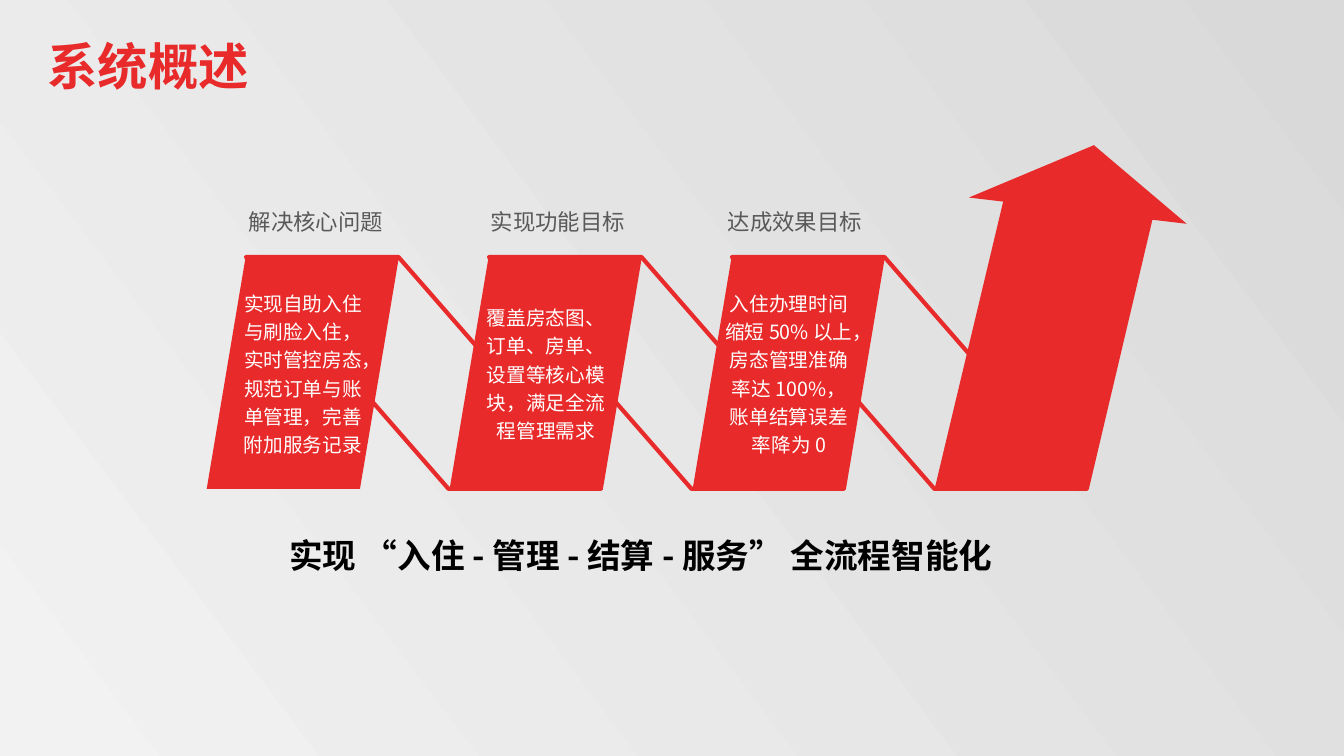
from pptx import Presentation
from pptx import util as u
from pptx.dml.color import RGBColor
from pptx.enum import shapes, text
from pptx.oxml.ns import qn
from lxml import etree

HUES = {"red": "E82A2A", "gray": "595959", "white": "FFFFFF", "black": "000000",
        "dark": "D9D9D9", "light": "F2F2F2"}
FONT = "Noto Sans CJK JP"


def write(frame, words, size, hue, align=None, bold=False):
    para = frame.paragraphs[0]
    para.alignment = align
    run = para.add_run()
    run.text = words
    font = run.font
    font.name, font.size, font.bold = FONT, u.Pt(size), bold
    font.color.rgb = RGBColor.from_string(HUES[hue])
    etree.SubElement(font._element, qn("a:ea"), typeface=FONT)
    return para


def label(box, words, size, hue, align=None, bold=False, wrap=True):
    frame = slide.shapes.add_textbox(*map(u.Inches, box)).text_frame
    frame.word_wrap = wrap
    frame.auto_size = text.MSO_AUTO_SIZE.SHAPE_TO_FIT_TEXT
    write(frame, words, size, hue, align, bold)


deck = Presentation()
deck.slide_width, deck.slide_height = u.Inches(13.33), u.Inches(7.5)
slide = deck.slides.add_slide(deck.slide_layouts[6])
red = RGBColor.from_string(HUES["red"])
center = text.PP_ALIGN.CENTER

back = slide.background.fill
back.gradient()
back.gradient_angle = 360 - 143
for stop, hue in zip(back.gradient_stops, ("dark", "light")):
    stop.color.rgb = RGBColor.from_string(HUES[hue])

steps = [
    (2.37, "解决核心问题", "实现自助入住与刷脸入住，实时管控房态，规范订单与账单管理，完善附加服务记录"),
    (4.77, "实现功能目标", "覆盖房态图、订单、房单、设置等核心模块，满足全流程管理需求"),
    (7.12, "达成效果目标", "入住办理时间缩短 50% 以上，房态管理准确率达 100%，账单结算误差率降为 0"),
]
pitch = 2.41
slant = shapes.MSO_SHAPE.PARALLELOGRAM

for i in range(len(steps)):
    band = slide.shapes.add_shape(slant, u.Inches(2.44 + i * pitch), u.Inches(2.55),
                                  u.Inches(3.52), u.Inches(2.3))
    band.adjustments[0] = 0.873
    band._element.spPr.xfrm.set("flipH", "1")
    band.shadow.inherit = False
    band.fill.background()
    band.line.color.rgb = red
    band.line.width = u.Pt(3)

for left, head, body in steps:
    label((left, 2.02, 1.99, 0.37), head, 16, "gray")

for i, (left, head, body) in enumerate(steps):
    card = slide.shapes.add_shape(slant, u.Inches(2.05 + i * pitch), u.Inches(2.53),
                                  u.Inches(1.91), u.Inches(2.32))
    card.adjustments[0] = 0.204
    card.shadow.inherit = False
    card.fill.solid()
    card.fill.fore_color.rgb = red
    card.line.fill.background()
    frame = card.text_frame
    frame.word_wrap = True
    frame.vertical_anchor = text.MSO_ANCHOR.MIDDLE
    frame.margin_left = frame.margin_right = 0
    para = write(frame, body, 14, "white", center)
    para.line_spacing = 1.2
    para.space_before = para.space_after = u.Pt(6)

label((2.19, 5.26, 8.33, 0.5), "实现 “入住 - 管理 - 结算 - 服务” 全流程智能化", 24, "black", center, True)

edge = [(10.85, 1.44), (11.77, 2.22), (11.43, 2.18), (10.8, 4.85),
        (9.27, 4.85), (9.95, 2), (9.61, 1.96)]
spots = [(u.Inches(x), u.Inches(y)) for x, y in edge]
pen = slide.shapes.build_freeform(*spots[0])
pen.add_line_segments(spots[1:], close=True)
arrow = pen.convert_to_shape()
arrow.shadow.inherit = False
arrow.fill.solid()
arrow.fill.fore_color.rgb = red
arrow.line.fill.background()

label((0.37, 0.3, 2.21, 0.71), "系统概述", 36, "red", bold=True, wrap=False)

deck.save("out.pptx")
